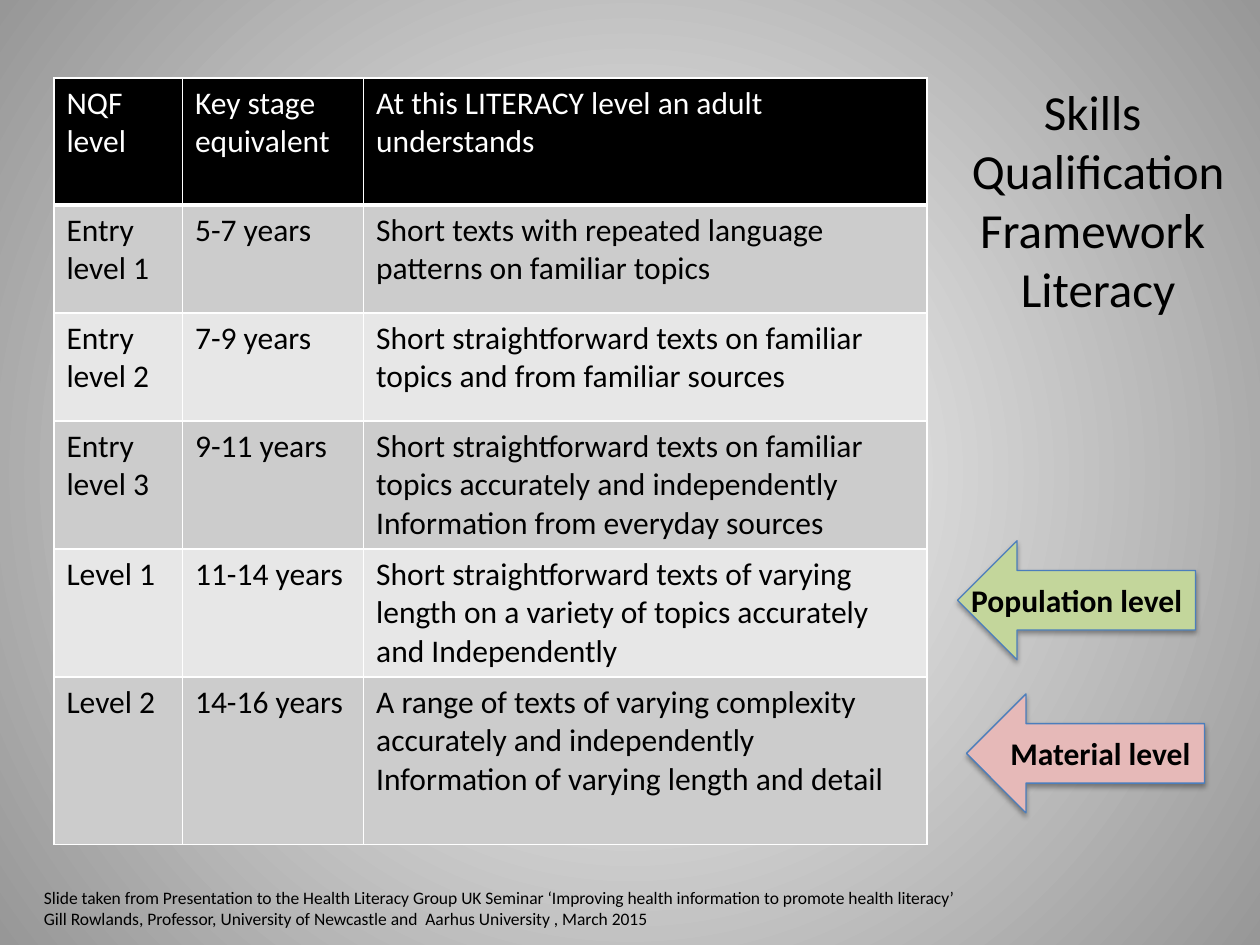
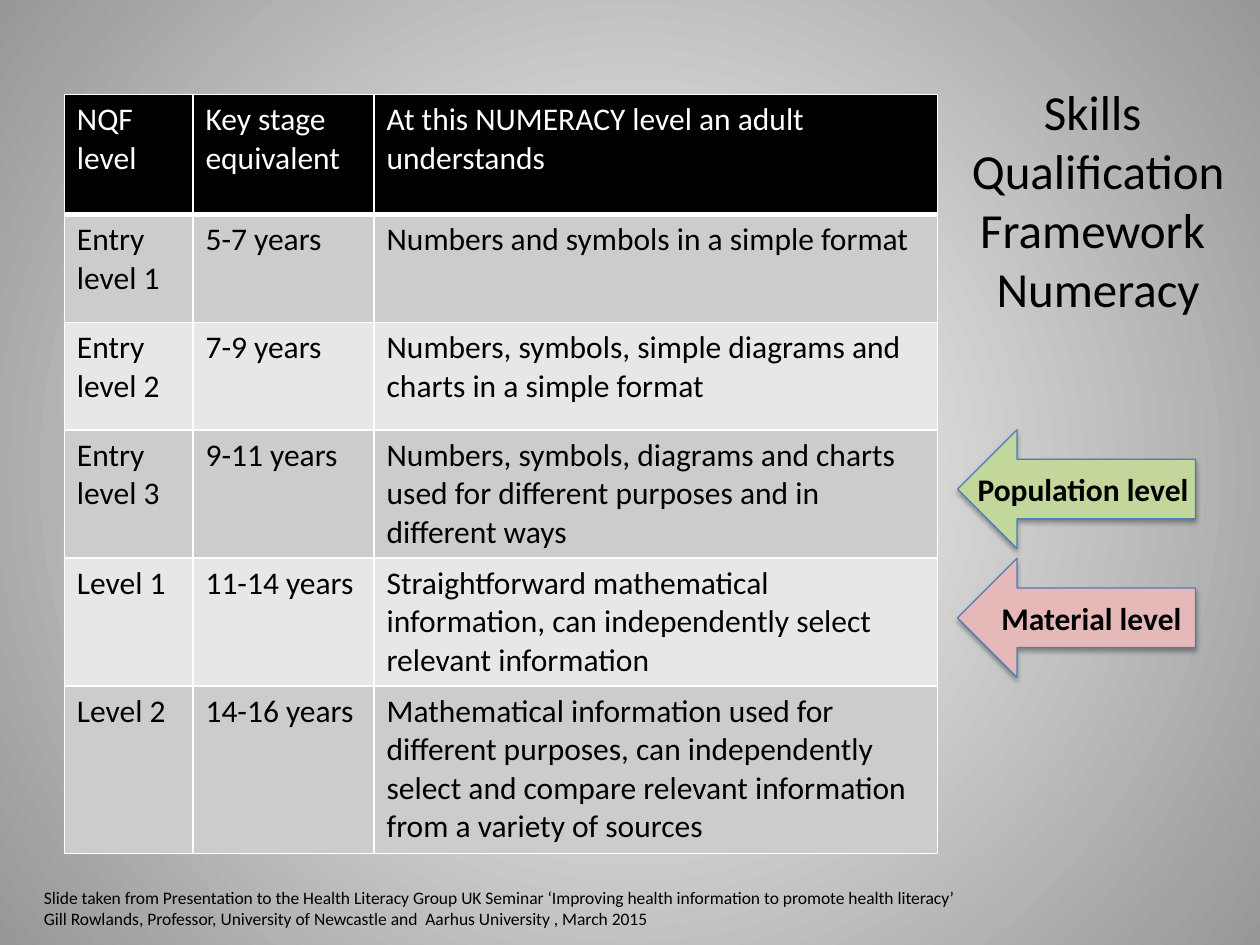
"""Build the literacy and numeracy skills framework slides."""
from pptx import Presentation
from pptx.dml.color import RGBColor
from pptx.enum import shapes, text
from pptx.oxml import parse_xml
from pptx.util import Pt

NS = 'xmlns:a="http://schemas.openxmlformats.org/drawingml/2006/main"'
PNS = 'xmlns:p="http://schemas.openxmlformats.org/presentationml/2006/main"'
FONT = "Calibri"
BLACK = RGBColor(0x00, 0x00, 0x00)
WHITE = RGBColor(0xFF, 0xFF, 0xFF)
DARK = RGBColor(0xCC, 0xCC, 0xCC)
LIGHT = RGBColor(0xE7, 0xE7, 0xE7)
GREEN = RGBColor(0xC3, 0xD6, 0x9B)
PINK = RGBColor(0xE6, 0xB9, 0xB8)
BLUE = RGBColor(0x4B, 0x7E, 0xBC)

LEVELS = [
    ("Entry level 1", "5-7 years"),
    ("Entry level 2", "7-9 years"),
    ("Entry level 3", "9-11 years"),
    ("Level 1", "11-14 years"),
    ("Level 2", "14-16 years"),
]
COLS = [73.5, 103.5, 322]
ROWS = [61.7, 61.7, 73.1, 73.1, 95.7]
ARROW = (136, 68)
TITLE = "Skills \nQualification\nFramework \n"
CREDIT = (
    "Slide taken from Presentation to the Health Literacy Group UK Seminar "
    "‘Improving health information to promote health literacy’\n"
    "Gill Rowlands, Professor, University of Newcastle and  Aarhus University , March 2015"
)

SLIDES = [
    {
        "skill": "Literacy",
        "table": (30.8, 44.6),
        "head": 72.6,
        "population": (547.2, 309),
        "label": (547.9, 328.3),
        "material": (552.3, 396.5),
        "grasp": [
            "Short texts with repeated language patterns on familiar topics",
            "Short straightforward texts on familiar topics and from familiar sources",
            "Short straightforward texts on familiar topics accurately and independently\n"
            "Information from everyday sources",
            "Short straightforward texts of varying length on a variety of topics "
            "accurately and Independently",
            "A range of texts of varying complexity\naccurately and independently\n"
            "Information of varying length and detail",
        ],
    },
    {
        "skill": "Numeracy",
        "table": (36.8, 53.9),
        "head": 68.6,
        "population": (547.2, 245.5),
        "label": (551.5, 265),
        "material": (547.2, 319),
        "grasp": [
            "Numbers and symbols in a simple format",
            "Numbers, symbols, simple diagrams and charts in a simple format",
            "Numbers, symbols, diagrams and charts used for different purposes "
            "and in different ways",
            "Straightforward mathematical information, can independently select "
            "relevant information",
            "Mathematical information used for different purposes, can independently "
            "select and compare relevant information from a variety of sources",
        ],
    },
]


def write(frame, words, size, color=BLACK, bold=False, align=None):
    frame.text = words
    for para in frame.paragraphs:
        font = para.font
        font.name, font.size, font.bold = FONT, Pt(size), bold
        font.color.rgb = color
        if align is not None:
            para.alignment = align


def add_text(slide, box, words, size, wrap=False, **style):
    frame = slide.shapes.add_textbox(*map(Pt, box)).text_frame
    write(frame, words, size, **style)
    frame.word_wrap = wrap
    frame.auto_size = text.MSO_AUTO_SIZE.SHAPE_TO_FIT_TEXT


def add_ground(slide):
    slide.element.cSld.insert(0, parse_xml(
        f'<p:bg {NS} {PNS}><p:bgPr><a:gradFill rotWithShape="1"><a:gsLst>'
        '<a:gs pos="0"><a:srgbClr val="FFFFFF"/></a:gs>'
        '<a:gs pos="100000"><a:srgbClr val="979797"/></a:gs></a:gsLst>'
        '<a:path path="circle"><a:fillToRect l="50000" t="50000" r="50000" b="50000"/>'
        '</a:path></a:gradFill><a:effectLst/></p:bgPr></p:bg>'))


def add_edges(cell, base):
    props = cell._tc.get_or_add_tcPr()
    for spot, (side, width) in enumerate([("L", 1), ("R", 1), ("T", 1), ("B", base)]):
        props.insert(spot, parse_xml(
            f'<a:ln{side} {NS} w="{Pt(width)}"><a:solidFill><a:srgbClr val="FFFFFF"/>'
            f'</a:solidFill></a:ln{side}>'))


def add_grid(slide, data):
    head = ("NQF level", "Key stage equivalent",
            f"At this {data['skill'].upper()} level an adult understands")
    lines = [head] + [(*level, item) for level, item in zip(LEVELS, data["grasp"])]
    highs = [data["head"]] + ROWS
    size = (sum(COLS), sum(highs))
    grid = slide.shapes.add_table(
        len(lines), len(COLS), *map(Pt, data["table"] + size)).table
    grid.first_row = grid.horz_banding = False
    for col, width in zip(grid.columns, COLS):
        col.width = Pt(width)
    for num, (row, high, line) in enumerate(zip(grid.rows, highs, lines)):
        row.height = Pt(high)
        fill = DARK if num % 2 else LIGHT
        for cell, words in zip(row.cells, line):
            write(cell.text_frame, words, 18, BLACK if num else WHITE)
            cell.fill.solid()
            cell.fill.fore_color.rgb = fill if num else BLACK
            add_edges(cell, 1 if num else 3)


def add_arrow(slide, spot, fill):
    arrow = slide.shapes.add_shape(
        shapes.MSO_SHAPE.LEFT_ARROW, *map(Pt, spot + ARROW))
    arrow.fill.solid()
    arrow.fill.fore_color.rgb = fill
    arrow.line.color.rgb = BLUE
    arrow.line.width = Pt(0.75)
    arrow.shadow.inherit = False
    arrow._element.spPr.find("{*}effectLst").append(parse_xml(
        f'<a:outerShdw {NS} blurRad="{Pt(3.1)}" dist="{Pt(1.8)}" dir="5400000" '
        'rotWithShape="0"><a:srgbClr val="000000"><a:alpha val="35000"/></a:srgbClr>'
        '</a:outerShdw>'))
    return arrow


def main():
    deck = Presentation()
    deck.slide_width, deck.slide_height = Pt(720), Pt(540)
    mid = text.PP_ALIGN.CENTER
    for data in SLIDES:
        slide = deck.slides.add_slide(deck.slide_layouts[6])
        add_ground(slide)
        add_grid(slide, data)
        add_arrow(slide, data["population"], GREEN)
        arrow = add_arrow(slide, data["material"], PINK)
        write(arrow.text_frame, "Material level", 18, bold=True, align=mid)
        arrow.text_frame.vertical_anchor = text.MSO_ANCHOR.MIDDLE
        add_text(slide, data["label"] + (137, 29), "Population level", 18, bold=True)
        add_text(slide, (547.2, 43.2, 160.6, 143.3), TITLE + data["skill"], 28, align=mid)
        add_text(slide, (18, 503.3, 696, 31.7), CREDIT, 10, wrap=True)
    deck.save("out.pptx")


if __name__ == "__main__":
    main()
